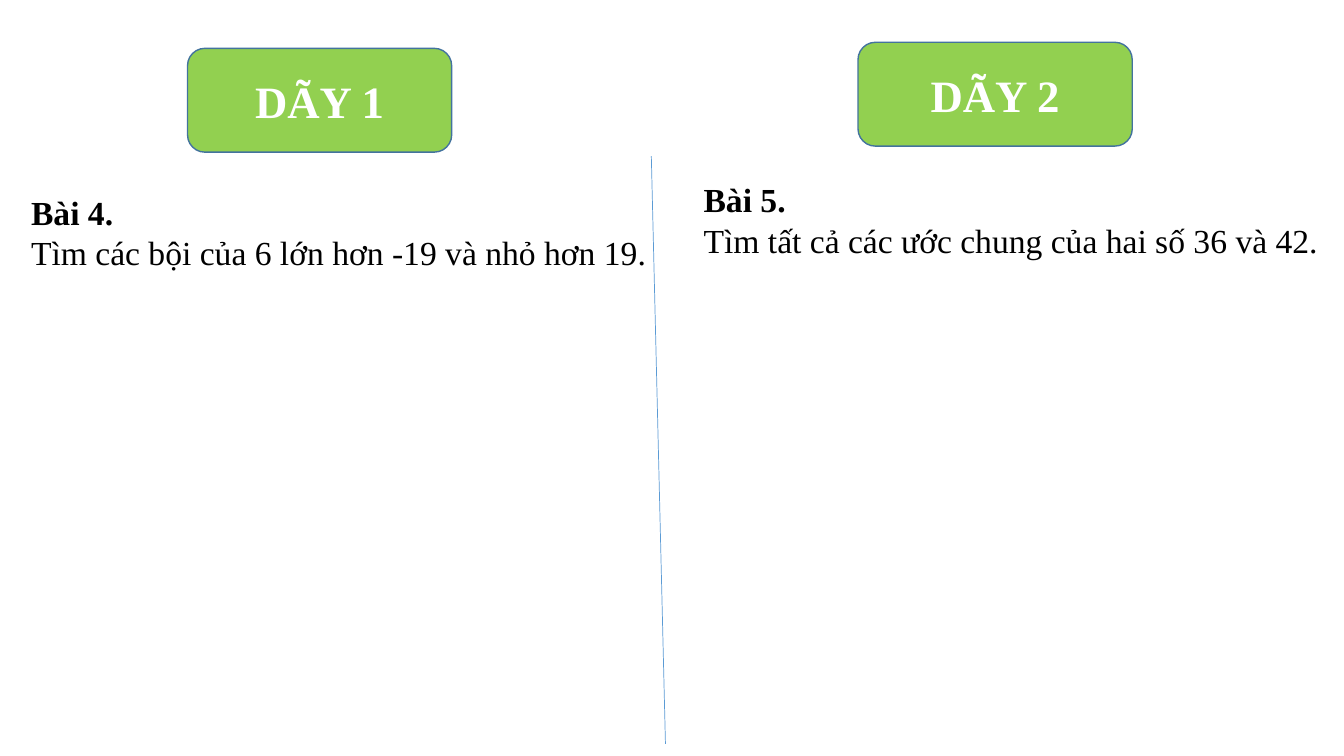
from lxml import etree
from pptx import Presentation
from pptx.dml.color import RGBColor
from pptx.enum.shapes import MSO_CONNECTOR, MSO_SHAPE
from pptx.enum.text import MSO_ANCHOR, MSO_AUTO_SIZE, PP_ALIGN
from pptx.oxml.ns import qn
from pptx.util import Pt

PX = 9144  # EMU per px, 100 px to the inch
FONT = "Times New Roman"
COLORS = {
    "badge": "92D050",
    "badge_line": "43739E",
    "badge_text": "FFFFFF",
    "divider": "5B9BD5",
    "text": "000000",
}
ROUNDED = MSO_SHAPE.ROUNDED_RECTANGLE
STRAIGHT = MSO_CONNECTOR.STRAIGHT
MIDDLE = MSO_ANCHOR.MIDDLE
CENTER = PP_ALIGN.CENTER
FIT_SHAPE = MSO_AUTO_SIZE.SHAPE_TO_FIT_TEXT

# Row title, badge box, exercise title, exercise text, exercise box
COLUMNS = [
    ("DÃY 1", (186, 48, 262, 103),
     "Bài 4.", "Tìm các bội của 6 lớn hơn -19 và nhỏ hơn 19.", (21, 185, 732, 91)),
    ("DÃY 2", (851, 42, 272, 103),
     "Bài 5.", "Tìm tất cả các ước chung của hai số 36 và 42.", (688, 173, 995, 91)),
]
DIVIDER = (646, 155, 660, 738)


def emu(lengths):
    return [length * PX for length in lengths]


def color(name):
    return RGBColor.from_string(COLORS[name])


def format_runs(paragraph, size, color_name, bold):
    for run in paragraph.runs:
        run.font.name = FONT
        run.font.size = Pt(size)
        run.font.bold = bold
        run.font.color.rgb = color(color_name)


def add_badge(slide, box, title):
    shape = slide.shapes.add_shape(ROUNDED, *emu(box))
    shape.shadow.inherit = False
    shape.fill.solid()
    shape.fill.fore_color.rgb = color("badge")
    shape.line.color.rgb = color("badge_line")
    shape.line.width = Pt(1)
    shape.text_frame.text = title
    shape.text_frame.vertical_anchor = MIDDLE
    paragraph = shape.text_frame.paragraphs[0]
    paragraph.alignment = CENTER
    format_runs(paragraph, 32, "badge_text", True)


def add_exercise(slide, box, title, task):
    text_frame = slide.shapes.add_textbox(*emu(box)).text_frame
    text_frame.word_wrap = True
    text_frame.auto_size = FIT_SHAPE
    text_frame.text = f"{title}\n{task}"
    for paragraph, bold in zip(text_frame.paragraphs, (True, False)):
        format_runs(paragraph, 24, "text", bold)


def add_divider(slide, ends):
    connector = slide.shapes.add_connector(STRAIGHT, *emu(ends))
    connector.line.color.rgb = color("divider")
    connector.line.width = Pt(0.5)
    properties = connector._element.find(qn("p:spPr"))
    etree.SubElement(properties, qn("a:effectLst"))


def main():
    presentation = Presentation()
    presentation.slide_width, presentation.slide_height = emu((1333, 750))
    slide = presentation.slides.add_slide(presentation.slide_layouts[6])
    for row_title, badge_box, title, task, exercise_box in COLUMNS:
        add_exercise(slide, exercise_box, title, task)
        add_badge(slide, badge_box, row_title)
    add_divider(slide, DIVIDER)
    presentation.save("out.pptx")


if __name__ == "__main__":
    main()
